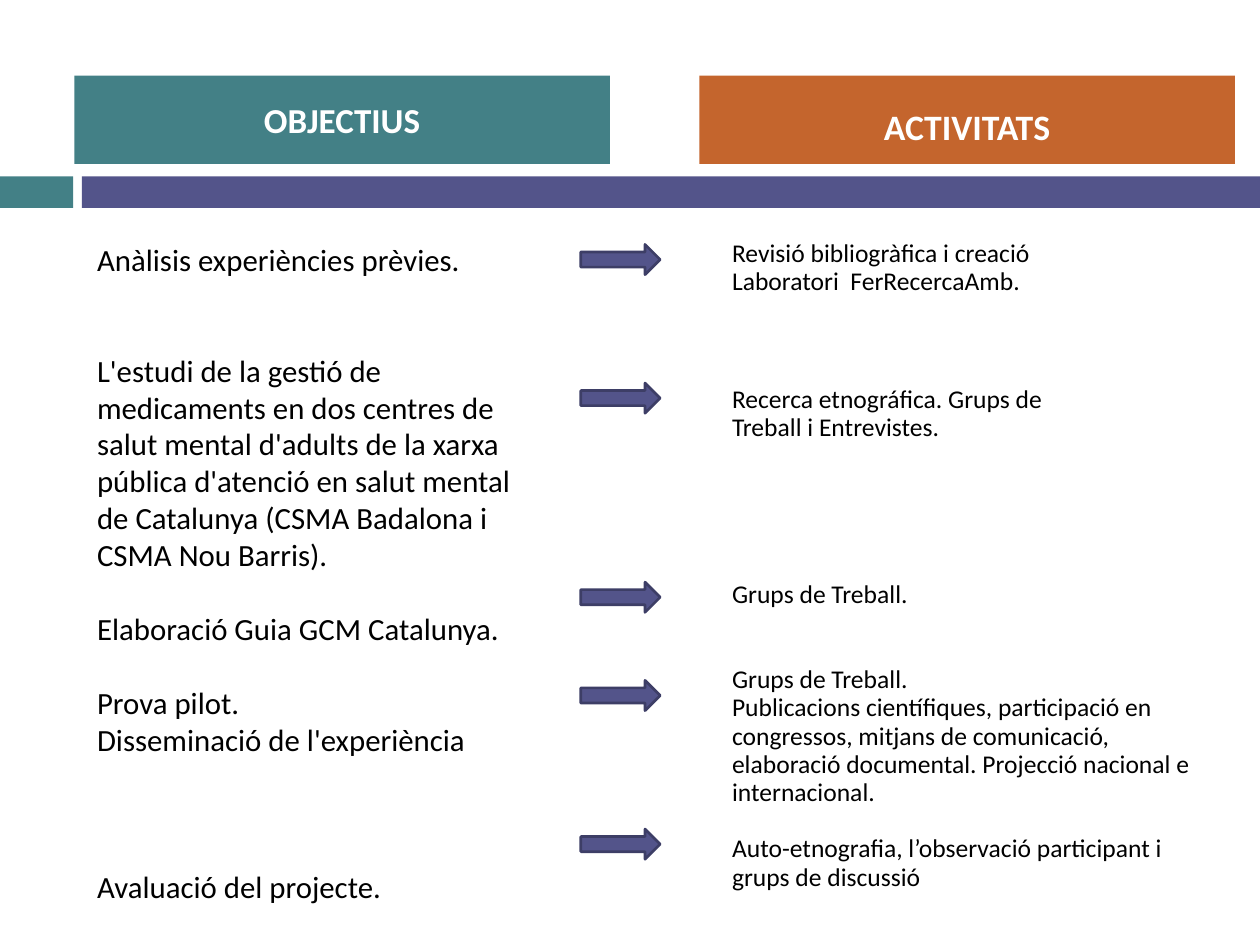
from pptx import Presentation
from pptx.dml.color import RGBColor
from pptx.enum.shapes import MSO_SHAPE
from pptx.enum.text import MSO_ANCHOR, MSO_AUTO_SIZE, PP_ALIGN
from pptx.oxml.ns import qn
from pptx.util import Inches, Pt

RECT, ARROW = MSO_SHAPE.RECTANGLE, MSO_SHAPE.RIGHT_ARROW
TOP, MIDDLE = MSO_ANCHOR.TOP, MSO_ANCHOR.MIDDLE
LEFT, CENTER = PP_ALIGN.LEFT, PP_ALIGN.CENTER
FIXED = MSO_AUTO_SIZE.NONE

COLS, ROWS = 100, 75
CELL = Inches(0.1)
FONT = "Calibri"
COLORS = {
    "teal": "438086",
    "violet": "53548A",
    "edge": "3D3E66",
    "orange": "C4652D",
    "text": "000000",
    "white": "FFFFFF",
}

# Each group: space above in points, then its lines
GOALS = [
    (0, ["Anàlisis experiències prèvies."]),
    (42.2, [
        "L'estudi de la gestió de",
        "medicaments en dos centres de",
        "salut mental d'adults de la xarxa",
        "pública d'atenció en salut mental",
        "de Catalunya (CSMA Badalona i",
        "CSMA Nou Barris).",
    ]),
    (21.1, ["Elaboració Guia GCM Catalunya."]),
    (21.1, ["Prova pilot.", "Disseminació de l'experiència"]),
    (63.3, ["Avaluació del projecte."]),
]
TASKS = [
    (0, ["Revisió bibliogràfica i creació", "Laboratori  FerRecercaAmb."]),
    (51.2, ["Recerca etnográfica. Grups de", "Treball i Entrevistes."]),
    (79.5, ["Grups de Treball."]),
    (32.4, [
        "Grups de Treball.",
        "Publicacions científiques, participació en",
        "congressos, mitjans de comunicació,",
        "elaboració documental. Projecció nacional e",
        "internacional.",
    ]),
    (16.1, ["Auto-etnografia, l’observació participant i", "grups de discussió"]),
]
ARROW_ROWS = [19.4, 30.4, 46.2, 54, 65.8]


def color(name):
    return RGBColor.from_string(COLORS[name])


def grid(box):
    """Turn a box in grid columns and rows into slide lengths."""
    return [round(n * CELL) for n in box]


def paint(shape, name):
    shape.fill.solid()
    shape.fill.fore_color.rgb = color(name)


def add_block(slide, kind, box, fill, edge=None):
    shape = slide.shapes.add_shape(kind, *grid(box))
    shape.shadow.inherit = False
    paint(shape, fill)
    if edge:
        shape.line.color.rgb = color(edge)
        shape.line.width = Pt(1.5)
    else:
        shape.line.fill.background()


def set_frame(holder, box, anchor, inset):
    """Place a placeholder and return its text frame, ready to fill."""
    holder.left, holder.top, holder.width, holder.height = grid(box)
    frame = holder.text_frame
    frame.word_wrap = True
    frame.auto_size = FIXED
    frame.vertical_anchor = anchor
    frame.margin_top = Inches(inset)
    return frame


def style(para, size, tint, align, bold=False):
    para.alignment = align
    font = para.runs[0].font
    font.name, font.size, font.bold = FONT, Pt(size), bold
    font.color.rgb = color(tint)


def add_head(holder, box, text, fill, size, inset):
    frame = set_frame(holder, box, MIDDLE, inset)
    paint(holder, fill)
    frame.text = text
    para = frame.paragraphs[0]
    para.space_before = Pt(0)
    style(para, size, "white", CENTER, True)


def add_list(holder, box, groups, size, pitch, inset):
    frame = set_frame(holder, box, TOP, inset)
    lines = [(line, gap if i == 0 else 0)
             for gap, group in groups for i, line in enumerate(group)]
    frame.text = "\n".join(line for line, _ in lines)
    for para, (_, gap) in zip(frame.paragraphs, lines):
        para.line_spacing = Pt(pitch)
        para.space_before = Pt(gap)
        para.space_after = Pt(0)
        props = para._p.get_or_add_pPr()
        props.set("marL", "0")
        props.set("indent", "0")
        props.append(props.makeelement(qn("a:buNone"), {}))
        style(para, size, "text", LEFT)


def add_band(slide, row, height):
    add_block(slide, RECT, (0, row, 5.8, height), "teal")
    add_block(slide, RECT, (6.5, row, COLS - 6.5, height), "violet")


def add_arrows(slide, col, width, height):
    for row in ARROW_ROWS:
        add_block(slide, ARROW, (col, row, width, height), "violet", "edge")


def main():
    deck = Presentation()
    deck.slide_width, deck.slide_height = COLS * CELL, ROWS * CELL
    compare = deck.slide_layouts.get_by_name("Comparison")
    slide = deck.slides.add_slide(compare)
    title, *holders = slide.placeholders
    title.element.getparent().remove(title.element)
    head1, list1, head2, list2 = holders

    add_band(slide, 14, 2.5)
    add_list(list1, (6.7, 18.6, 42.5, 51.2), GOALS, 17.6, 21.1, 0.05)
    add_list(list2, (57.1, 16.2, 42.9, 58.8), TASKS, 14.6, 16.1, 0.28)
    add_head(head1, (5.9, 6, 42.5, 7), "OBJECTIUS", "teal", 20, 0.05)
    add_head(head2, (55.5, 6, 42.5, 7), "ACTIVITATS", "orange", 20.4, 0.16)
    add_arrows(slide, 46.1, 6.3, 2.4)
    deck.save("out.pptx")


if __name__ == "__main__":
    main()
